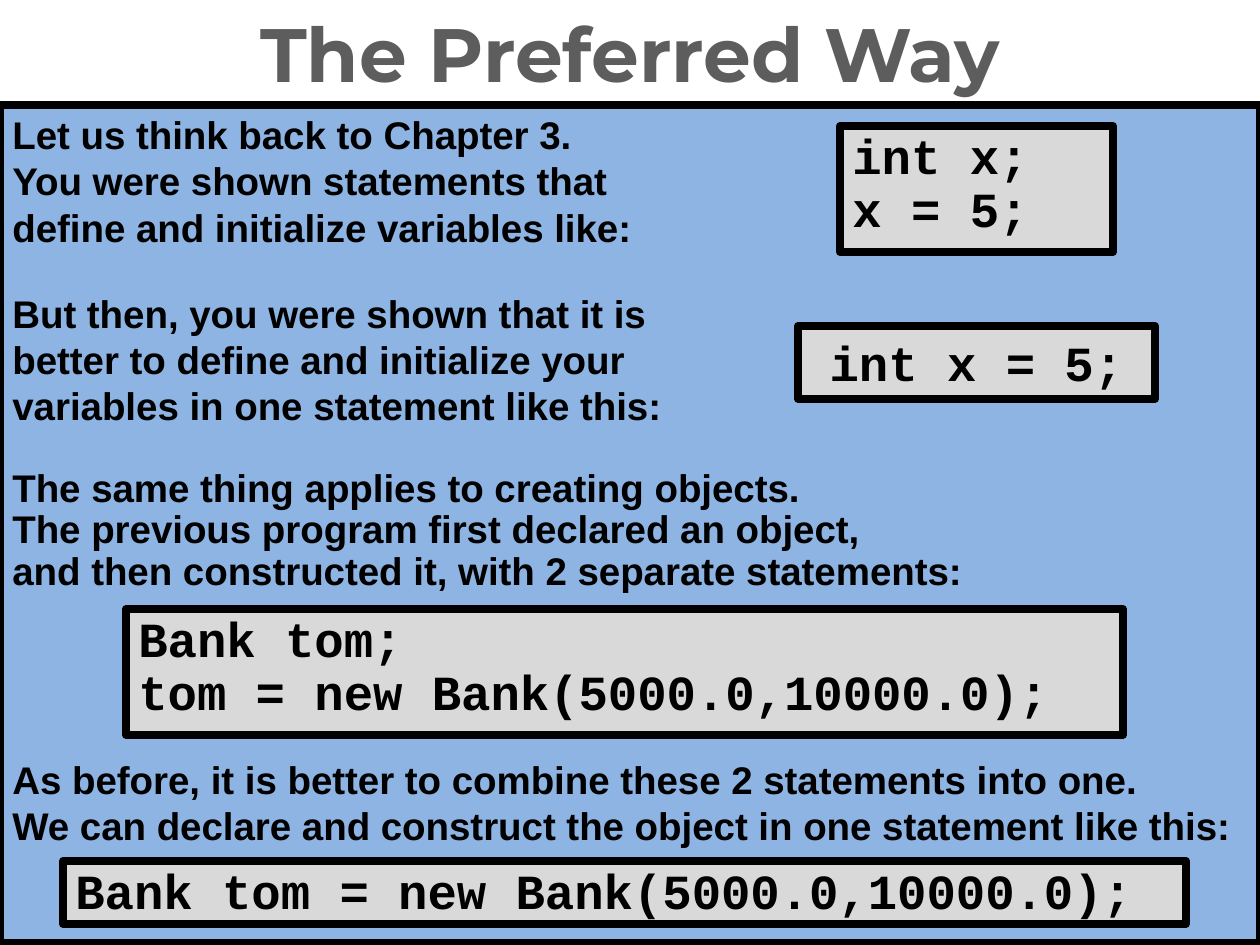
from pptx import Presentation
from pptx import util as u
from pptx.dml.color import RGBColor
from pptx.enum import shapes, text

PX = 914400 // 126  # slide is 1260 x 945 px
BLACK = RGBColor(0x00, 0x00, 0x00)
TITLE_GRAY = RGBColor(0x5D, 0x5D, 0x5D)
PANEL_BLUE = RGBColor(0x8E, 0xB4, 0xE3)
CODE_GRAY = RGBColor(0xD9, 0xD9, 0xD9)

presentation = Presentation()
presentation.slide_width = u.Emu(1260 * PX)
presentation.slide_height = u.Emu(945 * PX)
slide = presentation.slides.add_slide(presentation.slide_layouts[5])


def format_paragraph(paragraph, font_name, size, color, alignment):
    paragraph.alignment = alignment
    paragraph.font.name = font_name
    paragraph.font.size = u.Pt(size)
    paragraph.font.bold = True
    paragraph.font.color.rgb = color


def add_box(bounds, fill, lines, font_name, size, alignment=text.PP_ALIGN.LEFT):
    """Add a black-bordered box; each line is (words, line spacing, points before)."""
    shape = slide.shapes.add_shape(
        shapes.MSO_SHAPE.RECTANGLE, *(u.Emu(value * PX) for value in bounds))
    shape.shadow.inherit = False
    shape.fill.solid()
    shape.fill.fore_color.rgb = fill
    shape.line.color.rgb = BLACK
    shape.line.width = u.Pt(4.5)
    frame = shape.text_frame
    frame.word_wrap = True
    frame.vertical_anchor = text.MSO_ANCHOR.TOP
    for index, (words, spacing, before) in enumerate(lines):
        paragraph = frame.add_paragraph() if index else frame.paragraphs[0]
        paragraph.text = words
        paragraph.line_spacing = spacing
        if before:
            paragraph.space_before = u.Pt(before)
        format_paragraph(paragraph, font_name, size, BLACK, alignment)


# Title
title = slide.shapes.title
title.left, title.top = 0, 0
title.width, title.height = u.Emu(1260 * PX), u.Emu(105 * PX)
title.text_frame.text = "The Preferred Way"
title.text_frame.vertical_anchor = text.MSO_ANCHOR.MIDDLE
format_paragraph(title.text_frame.paragraphs[0], "Montserrat", 43.2,
                 TITLE_GRAY, text.PP_ALIGN.CENTER)

# Explanation panel
explanation = [
    ("Let us think back to Chapter 3.", 1.0, 0),
    ("You were shown statements that", 1.0, 0),
    ("define and initialize variables like:", 1.0, 0),
    ("But then, you were shown that it is", 1.0, 23),
    ("better to define and initialize your", 1.0, 0),
    ("variables in one statement like this:", 1.0, 0),
    ("The same thing applies to creating objects.", 0.9, 23),
    ("The previous program first declared an object,", 0.9, 0),
    ("and then constructed it, with 2 separate statements:", 0.9, 0),
    ("As before, it is better to combine these 2 statements into one.", 1.0, 93),
    ("We can declare and construct the object in one statement like this:", 1.0, 0),
]
add_box((0, 105, 1260, 838), PANEL_BLUE, explanation, "Arial", 22)

# Code boxes
LEFT, CENTER = text.PP_ALIGN.LEFT, text.PP_ALIGN.CENTER
code_boxes = [
    ((840, 126, 273, 126), ["int x;", "x = 5;"], 0.9, LEFT),
    ((798, 326, 357, 73), ["int x = 5;"], 1.0, CENTER),
    ((126, 609, 997, 126), ["Bank tom;", "tom = new Bank(5000.0,10000.0);"], 0.9, LEFT),
    ((63, 861, 1123, 63), ["Bank tom = new Bank(5000.0,10000.0);"], 0.9, LEFT),
]
for bounds, statements, spacing, alignment in code_boxes:
    add_box(bounds, CODE_GRAY, [(statement, spacing, 0) for statement in statements],
            "Courier New", 28, alignment)

presentation.save("out.pptx")
